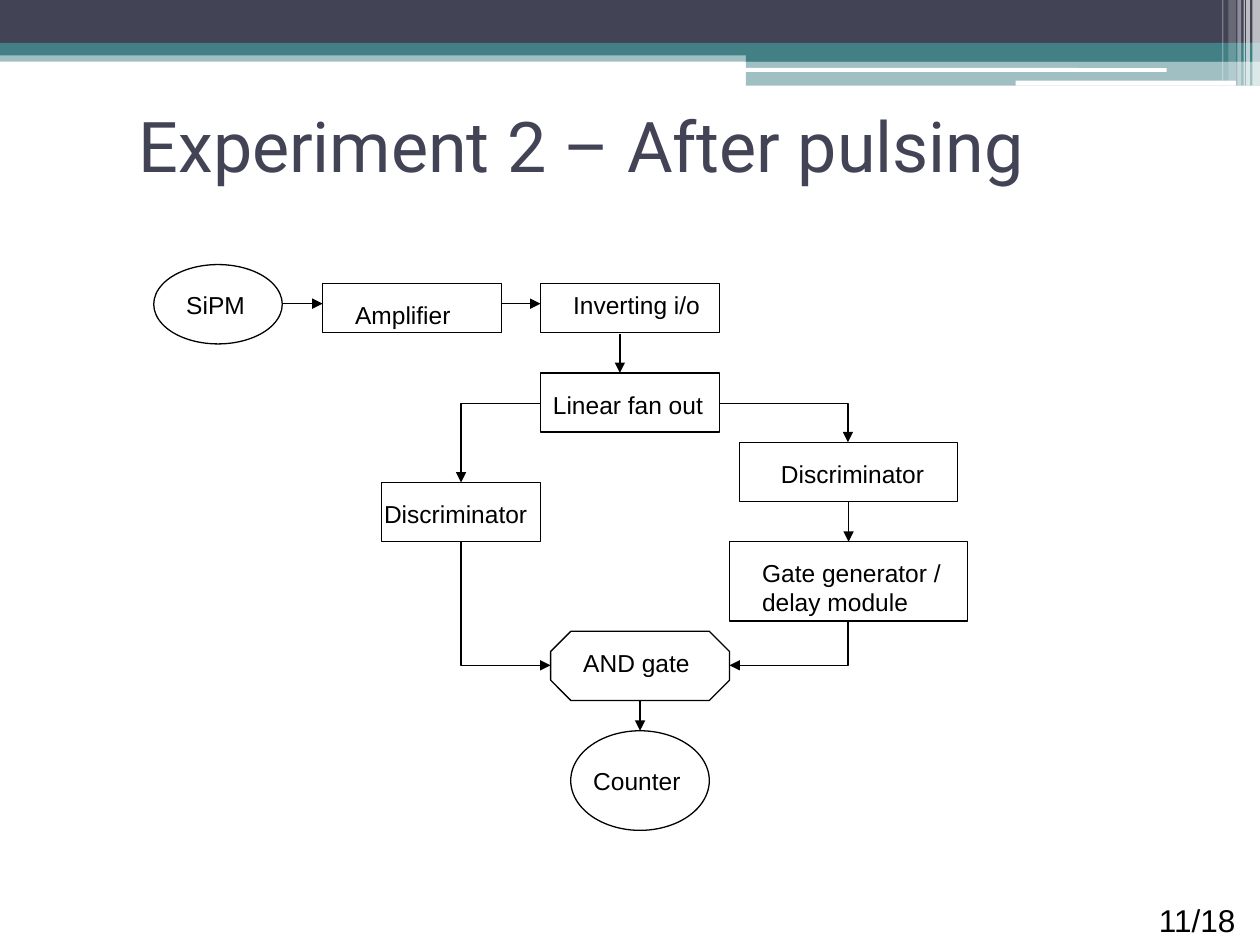
from dataclasses import dataclass

import pptx
import pptx.dml.color
import pptx.enum.shapes
import pptx.enum.text
import pptx.oxml.ns
import pptx.util
from lxml import etree

Inches = pptx.util.Inches
SHAPE = pptx.enum.shapes.MSO_SHAPE
CONNECTOR = pptx.enum.shapes.MSO_CONNECTOR
qn = pptx.oxml.ns.qn


@dataclass(frozen=True)
class Theme:
    navy: str = "424456"
    teal: str = "438086"
    white: str = "FFFFFF"
    black: str = "000000"
    title_font: str = "Roboto"
    body_font: str = "Arial"
    title_size: int = 40
    label_size: int = 14
    number_size: int = 18
    line_width: float = 0.75


T = Theme()


def rgb(value):
    return pptx.dml.color.RGBColor.from_string(value)


def set_attrs(target, values):
    for name, value in values.items():
        setattr(target, name, value)


def write(tf, text, font, size, color):
    p = tf.paragraphs[0]
    p.alignment = pptx.enum.text.PP_ALIGN.LEFT
    r = p.add_run()
    r.text = text
    set_attrs(r.font, {"name": font, "size": pptx.util.Pt(size)})
    r.font.color.rgb = rgb(color)


def add_text(s, box, text, size):
    tf = s.shapes.add_textbox(*map(Inches, box)).text_frame
    set_attrs(tf, {"word_wrap": True,
                   "auto_size": pptx.enum.text.MSO_AUTO_SIZE.SHAPE_TO_FIT_TEXT})
    write(tf, text, T.body_font, size, T.black)


def style_line(line):
    line.color.rgb = rgb(T.black)
    line.width = pptx.util.Pt(T.line_width)


def add_band(s, kind, box, color, alpha):
    sp = s.shapes.add_shape(kind, *map(Inches, box))
    sp.shadow.inherit = False
    sp.fill.solid()
    sp.fill.fore_color.rgb = rgb(color)
    sp.line.fill.background()
    if alpha < 100:
        clr = sp.fill._xPr.find(qn("a:solidFill"))[0]
        etree.SubElement(clr, qn("a:alpha"), val=str(alpha * 1000))


def add_header(s, box):
    x, y, w, h = box
    rect, rounded = SHAPE.RECTANGLE, SHAPE.ROUNDED_RECTANGLE
    bands = [
        (rect, 0, 0.4, w, 0.09, T.teal, 50),
        (rect, 0, 0, w, 0.34, T.navy, 100),
        (rect, 0, 0.34, w, 0.1, T.teal, 100),
        (rect, 5.92, 0.39, 4.08, 0.1, T.teal, 100),
        (rect, 5.92, 0.48, 4.08, 0.2, T.teal, 50),
        (rounded, 5.91, 0.54, 3.35, 0.03, T.white, 100),
        (rounded, 8.06, 0.64, 1.75, 0.04, T.white, 100),
    ]
    stripes = [(9.94, 0.06, h, 65), (9.89, 0.03, h, 65), (9.87, 0.01, h, 60),
               (9.82, 0.03, h, 40), (9.75, 0.06, 0.64, 20), (9.7, 0.01, 0.64, 30)]
    bands += [(rect, left, 0, width, height, T.white, alpha)
              for left, width, height, alpha in stripes]
    for kind, left, top, width, height, color, alpha in bands:
        add_band(s, kind, (x + left, y + top, width, height), color, alpha)


def add_title(s, box, text):
    sp = s.shapes.title
    set_attrs(sp, dict(zip(("left", "top", "width", "height"), map(Inches, box))))
    set_attrs(sp.text_frame, {"word_wrap": True,
                              "vertical_anchor": pptx.enum.text.MSO_ANCHOR.MIDDLE})
    write(sp.text_frame, text, T.title_font, T.title_size, T.navy)


def add_node(s, kind, box):
    sp = s.shapes.add_shape(kind, *map(Inches, box))
    sp.shadow.inherit = False
    sp.fill.background()
    style_line(sp.line)
    return sp


def add_arrow(s, kind, start, end):
    cxn = s.shapes.add_connector(kind, *map(Inches, (*start, *end)))
    style_line(cxn.line)
    sp_pr = cxn._element.spPr
    etree.SubElement(sp_pr.find(qn("a:ln")), qn("a:tailEnd"), type="triangle")
    etree.SubElement(sp_pr, qn("a:effectLst"))
    return cxn


def add_elbow(s, start, end, down_first):
    if down_first:
        cx, cy = (start[0] + end[0]) / 2, (start[1] + end[1]) / 2
        half_x, half_y = (end[0] - start[0]) / 2, (end[1] - start[1]) / 2
        start, end = (cx - half_y, cy + half_x), (cx + half_y, cy - half_x)
    sp_pr = add_arrow(s, CONNECTOR.ELBOW, start, end)._element.spPr
    sp_pr.find(qn("a:prstGeom")).set("prst", "bentConnector2")
    if down_first:
        sp_pr.find(qn("a:xfrm")).set("rot", str(90 * 60000))


def add_flowchart(s, box):
    x, y = box[:2]
    rect, oval = SHAPE.RECTANGLE, SHAPE.OVAL
    nodes = [
        ("sipm", "SiPM", oval, (0, 0, 1.02, 0.63), (0.16, 0.15, 1.26)),
        ("amplifier", "Amplifier", rect, (1.34, 0.15, 1.42, 0.39), (0.16, 0.08, 1.34)),
        ("inverter", "Inverting i/o", rect, (3.07, 0.15, 1.42, 0.39), (0.16, 0, 1.81)),
        ("fan_out", "Linear fan out", rect, (3.07, 0.86, 1.42, 0.47), (0, 0.09, 1.73)),
        ("left_disc", "Discriminator", rect, (1.81, 1.73, 1.26, 0.47), (-0.08, 0.08, 1.73)),
        ("right_disc", "Discriminator", rect, (4.65, 1.41, 1.73, 0.47), (0.23, 0.08, 1.73)),
        ("delay", "Gate generator / delay module", rect,
         (4.57, 2.2, 1.89, 0.63), (0.16, 0.08, 1.73)),
        ("and_gate", "AND gate", SHAPE.OCTAGON, (3.15, 2.91, 1.42, 0.55), (0.16, 0.08, 1.65)),
        ("counter", "Counter", oval, (3.31, 3.7, 1.1, 0.79), (0.08, 0.23, 1.65)),
    ]
    placed = {}
    for name, label, kind, (left, top, w, h), (dx, dy, label_w) in nodes:
        left, top = x + left, y + top
        placed[name] = add_node(s, kind, (left, top, w, h))
        label_h = 0.57 if name == "delay" else 0.33
        add_text(s, (left + dx, top + dy, label_w, label_h), label, T.label_size)

    arrows = [
        ((1.02, 0.31), (1.34, 0.31)),
        ((2.76, 0.31), (3.07, 0.31)),
        ((3.7, 0.55), (3.7, 0.86)),
        ((3.86, 3.46), (3.86, 3.7)),
    ]
    for (x1, y1), (x2, y2) in arrows:
        add_arrow(s, CONNECTOR.STRAIGHT, (x + x1, y + y1), (x + x2, y + y2))
    cxn = add_arrow(s, CONNECTOR.STRAIGHT, (x + 5.51, y + 1.88), (x + 5.51, y + 2.2))
    cxn.begin_connect(placed["right_disc"], 2)
    cxn.end_connect(placed["delay"], 0)

    elbows = [
        ((3.07, 1.1), (2.44, 1.73), False),
        ((4.49, 1.1), (5.51, 1.41), False),
        ((2.44, 2.2), (3.15, 3.18), True),
        ((5.51, 2.83), (4.57, 3.18), True),
    ]
    for (x1, y1), (x2, y2), down_first in elbows:
        add_elbow(s, (x + x1, y + y1), (x + x2, y + y2), down_first)


def main():
    prs = pptx.Presentation()
    set_attrs(prs, {"slide_width": Inches(10), "slide_height": Inches(7.5)})
    s = prs.slides.add_slide(prs.slide_layouts[5])
    add_header(s, (0, 0, 10, 0.68))
    add_title(s, (1, 0.52, 9, 1.25), "Experiment 2 – After pulsing")
    add_flowchart(s, (1.22, 2.1, 6.46, 4.49))
    add_text(s, (9.1, 7.1, 0.9, 0.4), "11/18", T.number_size)
    prs.save("out.pptx")


if __name__ == "__main__":
    main()
